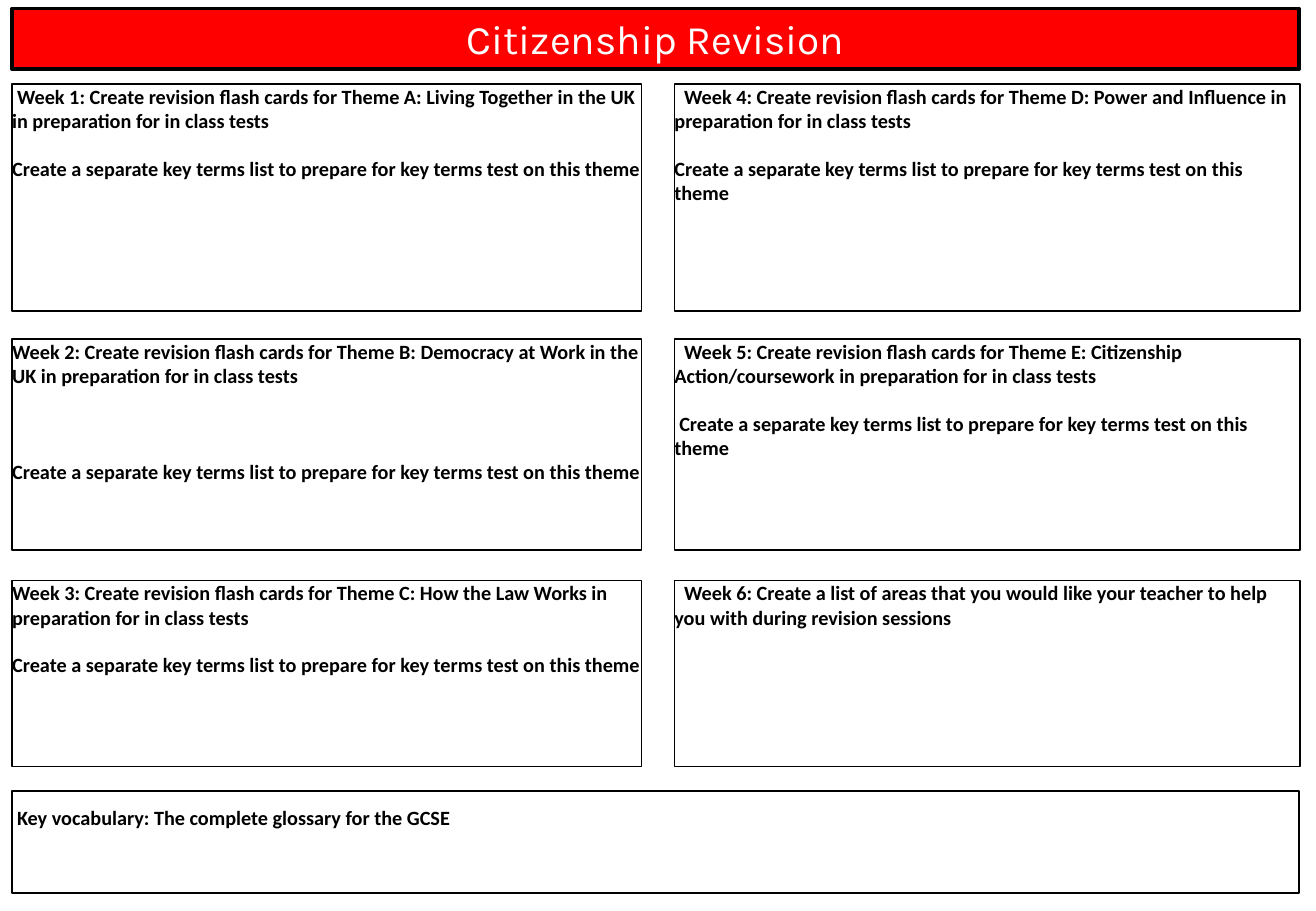
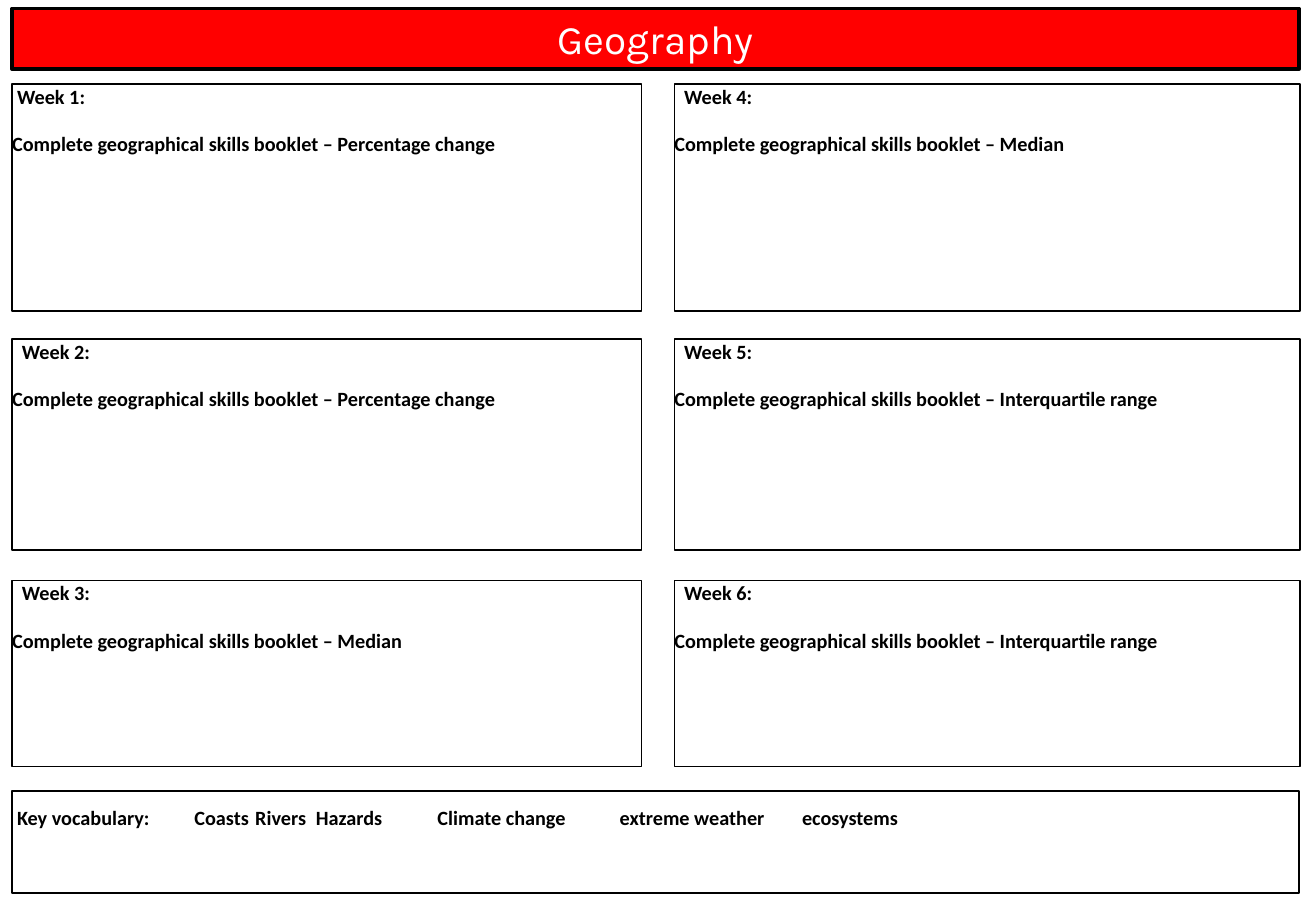
"""Build the Citizenship and Geography six-week revision planners."""
import pptx
import pptx.dml.color
import pptx.enum.shapes
import pptx.enum.text
import pptx.oxml.ns
import pptx.util
from lxml import etree

PX = 9144
BLACK = pptx.dml.color.RGBColor(0x00, 0x00, 0x00)
WHITE = pptx.dml.color.RGBColor(0xFF, 0xFF, 0xFF)
RED = pptx.dml.color.RGBColor(0xFF, 0x00, 0x00)
ALIGN = pptx.enum.text.PP_ALIGN
ANCHOR = pptx.enum.text.MSO_ANCHOR

COLUMNS = [(10, 518), (555, 515)]
ROWS = [(69, 187), (279, 174), (478, 153)]
VOCABULARY_TABS = [120, 200, 300, 400, 600, 800]
GAP, WIDE_GAP = 13.9, 42.4
SPACE, TWO_SPACES = 4, 8

KEY_TERMS = "Create a separate key terms list to prepare for key terms test on this theme"
CARDS = "Create revision flash cards for Theme"
TESTS = "in preparation for in class tests"
SKILLS = "Complete geographical skills booklet –"

PLANNERS = [
    ("Citizenship Revision", "Key vocabulary: The complete glossary for the GCSE", [
        [(f"Week 1: {CARDS} A: Living Together in the UK {TESTS}", SPACE, 0), (KEY_TERMS, 0, GAP)],
        [(f"Week 2: {CARDS} B: Democracy at Work in the UK {TESTS}", 0, 0), (KEY_TERMS, 0, WIDE_GAP)],
        [(f"Week 3: {CARDS} C: How the Law Works {TESTS}", 0, 0), (KEY_TERMS, 0, GAP)],
        [(f"Week 4: {CARDS} D: Power and Influence {TESTS}", TWO_SPACES, 0), (KEY_TERMS, 0, GAP)],
        [(f"Week 5: {CARDS} E: Citizenship Action/coursework {TESTS}", TWO_SPACES, 0),
         (KEY_TERMS, SPACE, GAP)],
        [("Week 6: Create a list of areas that you would like your teacher to help you "
          "with during revision sessions", TWO_SPACES, 0)],
    ]),
    ("Geography", "Key vocabulary:\tCoasts\tRivers\tHazards\tClimate change\textreme weather\tecosystems", [
        [(f"Week {week}:", SPACE if week == 1 else TWO_SPACES, 0), (f"{SKILLS} {topic}", 0, GAP)]
        for week, topic in enumerate(["Percentage change", "Percentage change", "Median",
                                      "Median", "Interquartile range", "Interquartile range"], 1)
    ]),
]


def add_box(s, left, top, width, height, weight=1, inset_top=0):
    sp = s.shapes.add_shape(pptx.enum.shapes.MSO_SHAPE.RECTANGLE,
                            left * PX, top * PX, width * PX, height * PX)
    sp.shadow.inherit = False
    sp.fill.background()
    sp.line.color.rgb = BLACK
    sp.line.width = pptx.util.Pt(weight)
    tf = sp.text_frame
    tf.word_wrap = True
    tf.vertical_anchor = ANCHOR.TOP
    tf.margin_left = tf.margin_right = tf.margin_bottom = 0
    tf.margin_top = inset_top * PX
    return sp


def add_text(p, text, indent=0, before=0, align=ALIGN.LEFT, font="Calibri", size=12, bold=True, color=BLACK):
    p.alignment = align
    p.space_before = pptx.util.Pt(before)
    p._p.get_or_add_pPr().set("indent", str(indent * PX))
    r = p.add_run()
    r.text = text
    r.font.name = font
    r.font.size = pptx.util.Pt(size)
    r.font.bold = bold
    r.font.color.rgb = color


prs = pptx.Presentation()
prs.slide_width = 1083 * PX
prs.slide_height = 750 * PX

for title, vocabulary, weeks in PLANNERS:
    s = prs.slides.add_slide(prs.slide_layouts[6])

    sp = add_box(s, 10, 7, 1059, 50, weight=2.25, inset_top=5)
    sp.fill.solid()
    sp.fill.fore_color.rgb = RED
    add_text(sp.text_frame.paragraphs[0], title, align=ALIGN.CENTER,
             font="Karla", size=24, bold=False, color=WHITE)

    for i, paragraphs in enumerate(weeks):
        left, width = COLUMNS[i // len(ROWS)]
        top, height = ROWS[i % len(ROWS)]
        tf = add_box(s, left, top, width, height).text_frame
        for n, (text, indent, before) in enumerate(paragraphs):
            p = tf.add_paragraph() if n else tf.paragraphs[0]
            add_text(p, text, indent, before)

    p = add_box(s, 10, 651, 1059, 84, inset_top=16).text_frame.paragraphs[0]
    p.line_spacing = pptx.util.Pt(11.5)
    if "\t" in vocabulary:
        tabs = etree.SubElement(p._p.get_or_add_pPr(), pptx.oxml.ns.qn("a:tabLst"))
        for stop in VOCABULARY_TABS:
            etree.SubElement(tabs, pptx.oxml.ns.qn("a:tab"), pos=str(stop * PX), algn="l")
    add_text(p, vocabulary, indent=SPACE, align=ALIGN.JUSTIFY)

prs.save("out.pptx")
